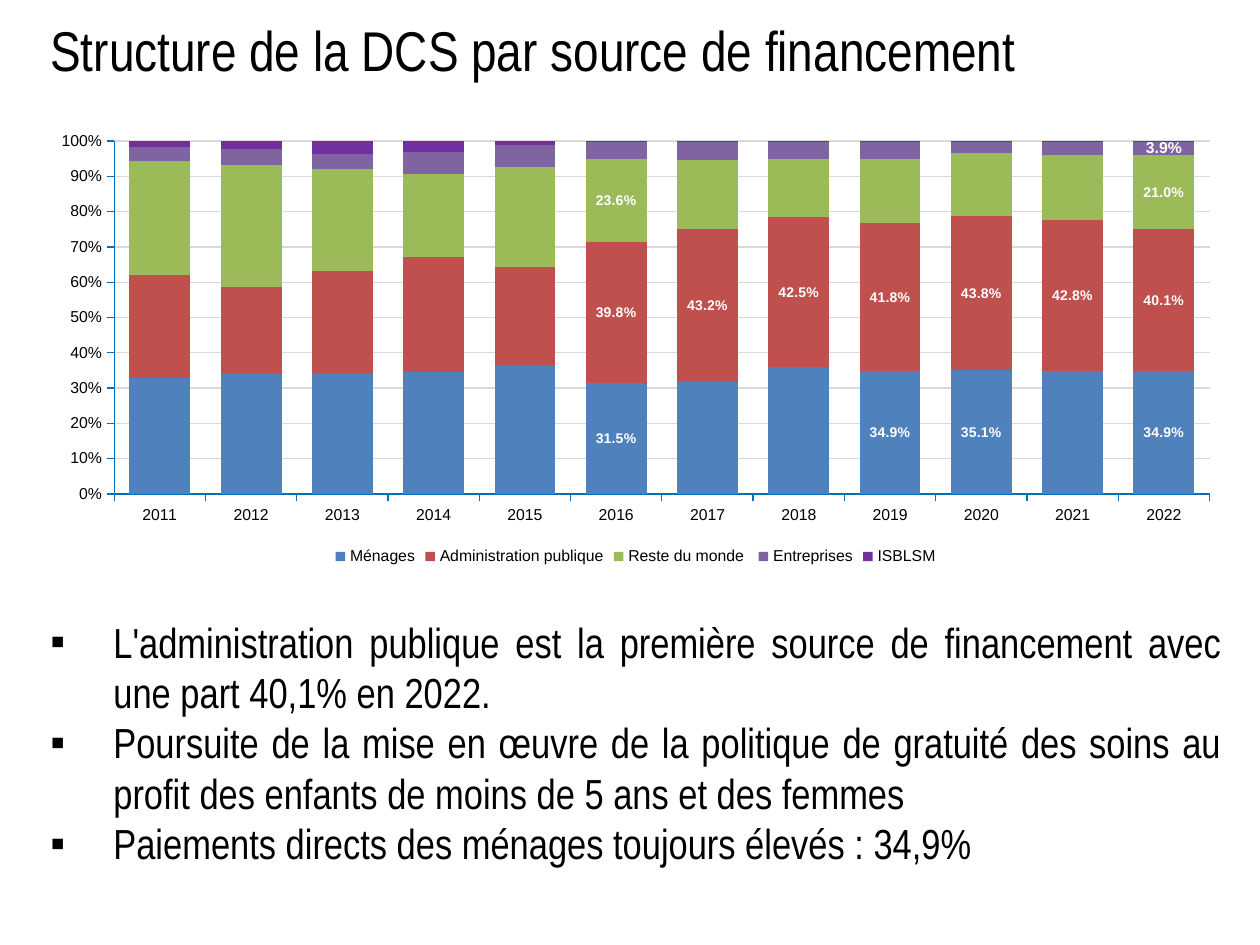
from dataclasses import dataclass

from lxml import etree
from pptx import Presentation
from pptx.chart.data import CategoryChartData
from pptx.dml.color import RGBColor
from pptx.enum import chart as ch, text
from pptx.oxml import ns
from pptx.util import Inches, Pt


@dataclass(frozen=True)
class Theme:
    ink: str = "000000"
    paper: str = "FFFFFF"
    axis: str = "0070C0"
    grid: str = "D9D9D9"
    series: tuple = ("4F81BD", "C0504D", "9BBB59", "8064A2", "7030A0")
    text_font: str = "Arial Narrow"
    chart_font: str = "Arial"
    title_size: int = 32
    body_size: int = 24
    axis_size: int = 9
    label_size: int = 8


theme = Theme()


def style_font(font, name, size, color, bold=False):
    font.name, font.size, font.bold = name, Pt(size), bold
    font.color.rgb = RGBColor.from_string(color)


def place(sp, left, top, width, height):
    sp.left, sp.top = Inches(left), Inches(top)
    sp.width, sp.height = Inches(width), Inches(height)
    sp.fill.solid()
    sp.fill.fore_color.rgb = RGBColor.from_string(theme.paper)


prs = Presentation()
prs.slide_width, prs.slide_height = Inches(10), Inches(7.5)
s = prs.slides.add_slide(prs.slide_layouts[1])

title = s.shapes.title
place(title, 0.3, 0.13, 9.49, 0.63)
tf = title.text_frame
tf.text = "Structure de la DCS par source de financement"
tf.vertical_anchor = text.MSO_ANCHOR.BOTTOM
tf.auto_size = text.MSO_AUTO_SIZE.NONE
tf.margin_bottom = Inches(0.1)
p = tf.paragraphs[0]
p.alignment = text.PP_ALIGN.LEFT
style_font(p.runs[0].font, theme.text_font, theme.title_size, theme.ink)

years = [str(year) for year in range(2011, 2023)]
sources = [
    ("Ménages", (0.329, 0.339, 0.340, 0.346, 0.362, 0.315,
                 0.318, 0.359, 0.349, 0.351, 0.348, 0.349),
     (2016, 2019, 2020, 2022)),
    ("Administration publique", (0.290, 0.246, 0.292, 0.325, 0.281, 0.398,
                                 0.432, 0.425, 0.418, 0.438, 0.428, 0.401),
     range(2016, 2023)),
    ("Reste du monde ", (0.324, 0.348, 0.289, 0.236, 0.283, 0.236,
                         0.197, 0.164, 0.183, 0.178, 0.185, 0.210),
     (2016, 2022)),
    ("Entreprises", (0.040, 0.043, 0.044, 0.061, 0.062, 0.048,
                     0.050, 0.049, 0.048, 0.032, 0.037, 0.039),
     (2022,)),
    ("ISBLSM", (0.016, 0.024, 0.036, 0.032, 0.012, 0.002,
                0.003, 0.003, 0.002, 0.002, 0.002, 0.001), ()),
]
data = CategoryChartData(number_format="0.0%")
data.categories = years
for name, values, labelled in sources:
    data.add_series(name, values)

chart = s.shapes.add_chart(
    ch.XL_CHART_TYPE.COLUMN_STACKED_100, Inches(0.3), Inches(0.97),
    Inches(9.49), Inches(3.56), data).chart
style_font(chart.font, theme.chart_font, theme.axis_size, theme.ink)
chart.has_title = False
chart.has_legend = True
chart.legend.position = ch.XL_LEGEND_POSITION.BOTTOM
chart.legend.include_in_layout = False
style_font(chart.legend.font, theme.chart_font, theme.axis_size, theme.ink)

plot = chart.plots[0]
plot.gap_width, plot.overlap = 50, 100
plot.vary_by_categories = False
for series, color, (name, values, labelled) in zip(plot.series, theme.series, sources):
    series.format.fill.solid()
    series.format.fill.fore_color.rgb = RGBColor.from_string(color)
    size = theme.axis_size if name == "Entreprises" else theme.label_size
    for year in labelled:
        label = series.points[year - 2011].data_label
        style_font(label.font, theme.chart_font, size, theme.paper, True)
        label.position = ch.XL_LABEL_POSITION.CENTER

for axis in (chart.category_axis, chart.value_axis):
    style_font(axis.tick_labels.font, theme.chart_font, theme.axis_size, theme.ink)
    axis.major_tick_mark = ch.XL_TICK_MARK.OUTSIDE
    axis.minor_tick_mark = ch.XL_TICK_MARK.NONE
    axis.format.line.color.rgb = RGBColor.from_string(theme.axis)
    axis.format.line.width = Pt(0.75)
axis = chart.value_axis
axis.minimum_scale, axis.maximum_scale, axis.major_unit = 0, 1, 0.1
axis.tick_labels.number_format = "0%"
axis.tick_labels.number_format_is_linked = False
axis.has_major_gridlines = True
grid = axis.major_gridlines.format.line
grid.color.rgb = RGBColor.from_string(theme.grid)
grid.width = Pt(0.75)

area = chart.element.find(".//" + ns.qn("c:plotArea"))
for old in area.findall(ns.qn("c:layout")):
    area.remove(old)
layout = etree.Element(ns.qn("c:layout"))
manual = etree.SubElement(layout, ns.qn("c:manualLayout"))
for tag, value in (("layoutTarget", "inner"), ("xMode", "edge"), ("yMode", "edge"),
                   ("x", "0.064"), ("y", "0.042"), ("w", "0.916"), ("h", "0.787")):
    etree.SubElement(manual, ns.qn("c:" + tag), val=value)
area.insert(0, layout)

body = s.placeholders[1]
place(body, 0.3, 4.84, 9.49, 2.12)
tf = body.text_frame
tf.auto_size = text.MSO_AUTO_SIZE.NONE
tf.text = "\n".join((
    "L'administration publique est la première source de financement avec "
    "une part 40,1% en 2022.",
    "Poursuite de la mise en œuvre de la politique de gratuité des soins au "
    "profit des enfants de moins de 5 ans et des femmes",
    "Paiements directs des ménages toujours élevés : 34,9%",
))
for p in tf.paragraphs:
    p.alignment = text.PP_ALIGN.JUSTIFY
    p.space_before = p.space_after = Pt(0)
    style_font(p.runs[0].font, theme.text_font, theme.body_size, theme.ink)
    pPr = p._p.get_or_add_pPr()
    pPr.set("marL", str(Inches(0.5)))
    pPr.set("indent", str(Inches(-0.5)))
    etree.SubElement(pPr, ns.qn("a:buFont"), typeface=theme.chart_font)
    etree.SubElement(pPr, ns.qn("a:buChar"), char="▪")

prs.save("out.pptx")
